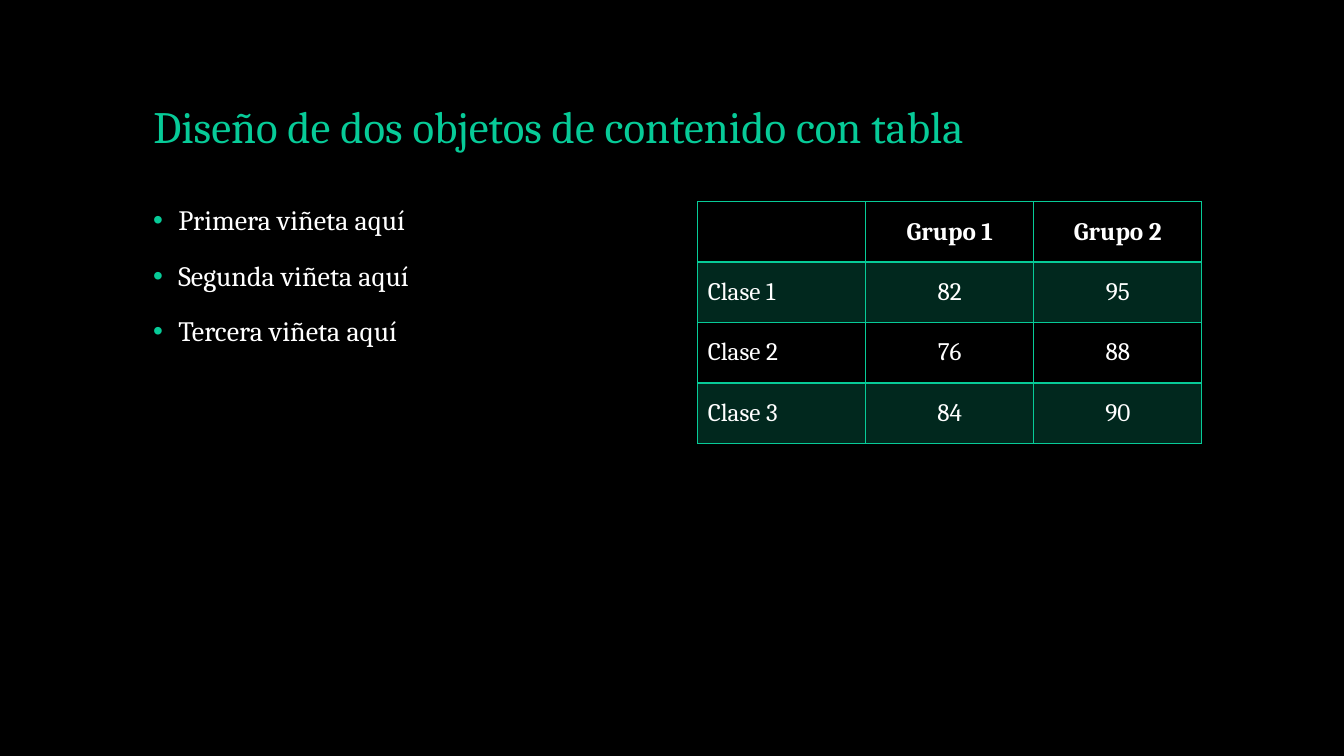
import pptx
import pptx.dml.color
import pptx.enum.text
import pptx.oxml.ns
import pptx.util
from lxml import etree

COLORS = {"background": "000000", "accent": "07CB98", "text": "FFFFFF"}
FONT = "Cambria"
TITLE = "Diseño de dos objetos de contenido con tabla"
BULLETS = ["Primera viñeta aquí", "Segunda viñeta aquí", "Tercera viñeta aquí"]
SCORES = [
    ["", "Grupo 1", "Grupo 2"],
    ["Clase 1", "82", "95"],
    ["Clase 2", "76", "88"],
    ["Clase 3", "84", "90"],
]
Inches = pptx.util.Inches
ALIGN = pptx.enum.text.PP_ALIGN
ANCHOR = pptx.enum.text.MSO_ANCHOR


def rgb(name):
    """Return the named colour."""
    return pptx.dml.color.RGBColor.from_string(COLORS[name])


def add_child(parent, tag, **attributes):
    """Append a DrawingML element to its parent."""
    return etree.SubElement(parent, pptx.oxml.ns.qn(f"a:{tag}"), attributes)


def add_run(paragraph, wording, size, color="text", bold=False):
    """Add one formatted run to a paragraph."""
    run = paragraph.add_run()
    run.text = wording
    run.font.name = FONT
    run.font.size = pptx.util.Pt(size)
    run.font.bold = bold
    run.font.color.rgb = rgb(color)


def add_title(slide, left, top, width, height):
    """Place the heading at the bottom of its box."""
    title = slide.shapes.title
    title.left, title.top = Inches(left), Inches(top)
    title.width, title.height = Inches(width), Inches(height)
    frame = title.text_frame
    frame.auto_size = pptx.enum.text.MSO_AUTO_SIZE.NONE
    frame.word_wrap = True
    frame.vertical_anchor = ANCHOR.BOTTOM
    heading = frame.paragraphs[0]
    heading.alignment = ALIGN.LEFT
    heading.line_spacing = 0.9
    add_run(heading, TITLE, 32, "accent")


def add_bullets(slide, left, top, width, height):
    """Place the bulleted list in its box."""
    box = slide.shapes.add_textbox(*map(Inches, (left, top, width, height)))
    frame = box.text_frame
    frame.word_wrap = True
    for index, wording in enumerate(BULLETS):
        bullet = frame.add_paragraph() if index else frame.paragraphs[0]
        properties = bullet._p.get_or_add_pPr()
        properties.set("marL", str(Inches(0.25)))
        properties.set("indent", str(Inches(-0.25)))
        add_child(add_child(properties, "buClr"), "srgbClr", val=COLORS["accent"])
        add_child(properties, "buFont", typeface="Arial")
        add_child(properties, "buChar", char="•")
        bullet.line_spacing = 0.9
        bullet.space_before = pptx.util.Pt(18 if index else 0)
        add_run(bullet, wording, 20)


def style_cell(cell, is_header, is_shaded):
    """Draw the borders and the fill of one cell."""
    properties = cell._tc.get_or_add_tcPr()
    for side in ("lnL", "lnR", "lnT", "lnB"):
        points = 2 if is_header and side == "lnB" else 1
        border = add_child(properties, side, w=str(pptx.util.Pt(points)))
        add_child(add_child(border, "solidFill"), "srgbClr", val=COLORS["accent"])
    if is_shaded:
        fill = add_child(properties, "solidFill")
        tint = add_child(fill, "srgbClr", val=COLORS["accent"])
        add_child(tint, "alpha", val="20000")
    else:
        cell.fill.background()


def add_scores(slide, left, top, width, height):
    """Place the table of scores in its box."""
    table = slide.shapes.add_table(
        len(SCORES), len(SCORES[0]), *map(Inches, (left, top, width, height))
    ).table
    table.horz_banding = False
    table.first_row = False
    for row in table.rows:
        row.height = Inches(height / len(SCORES))
    for row_index, values in enumerate(SCORES):
        for column_index, value in enumerate(values):
            cell = table.cell(row_index, column_index)
            cell.vertical_anchor = ANCHOR.MIDDLE
            style_cell(cell, row_index == 0, row_index % 2 == 1)
            if value:
                entry = cell.text_frame.paragraphs[0]
                entry.alignment = ALIGN.CENTER if column_index else ALIGN.LEFT
                add_run(entry, value, 18, bold=row_index == 0)


def main():
    """Build and save the slide."""
    presentation = pptx.Presentation()
    presentation.slide_width = Inches(13.33)
    presentation.slide_height = Inches(7.5)
    slide = presentation.slides.add_slide(presentation.slide_layouts[5])
    slide.background.fill.solid()
    slide.background.fill.fore_color.rgb = rgb("background")
    add_title(slide, 1.42, 0.4, 10.5, 1.17)
    add_bullets(slide, 1.42, 2, 5, 4.76)
    add_scores(slide, 6.92, 2, 5, 2.4)
    presentation.save("out.pptx")


if __name__ == "__main__":
    main()
